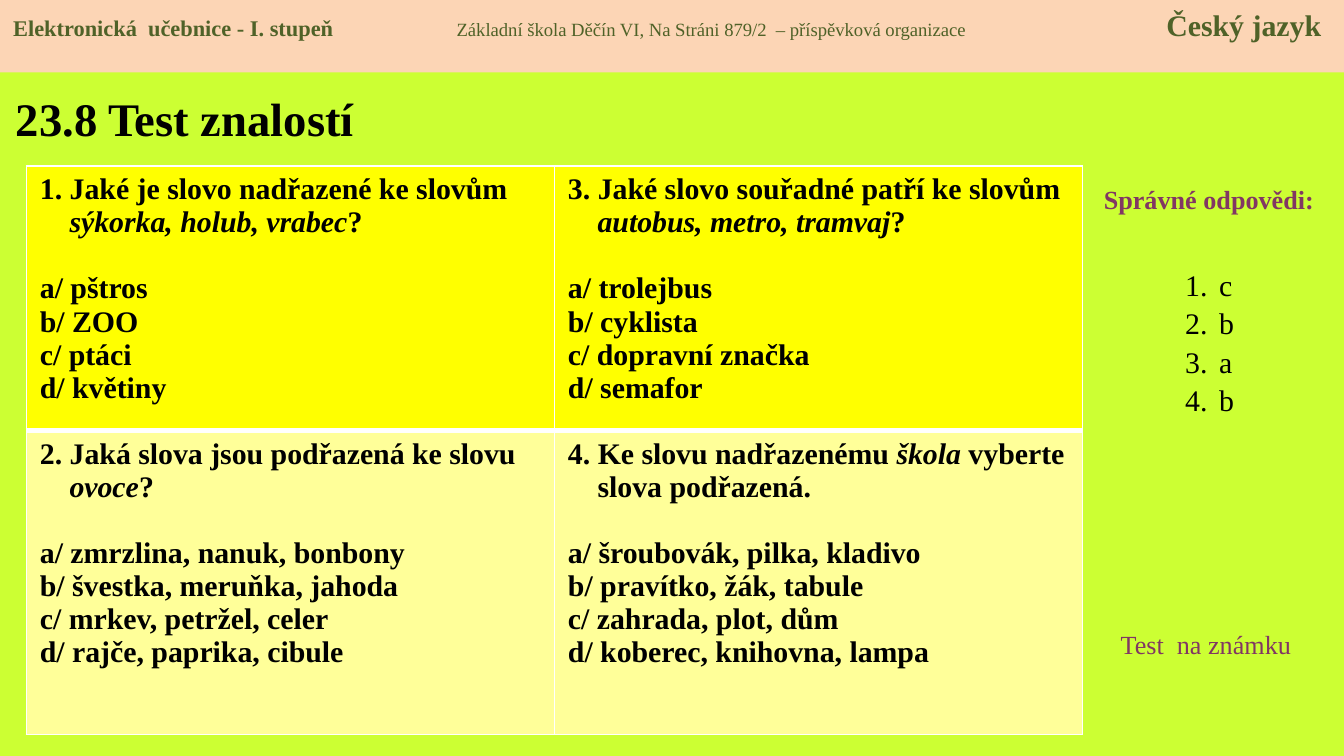
"""Build a Czech vocabulary test slide with a question grid and an answer key."""
from lxml.etree import SubElement as Sub
from pptx import Presentation
from pptx.dml.color import RGBColor
from pptx.enum.shapes import MSO_SHAPE as Shape
from pptx.enum.text import MSO_ANCHOR as Anchor, PP_ALIGN as Align
from pptx.oxml.ns import qn
from pptx.util import Cm, Pt


def hue(code):
    return RGBColor.from_string(code)


def style(para, size, color, bold=False):
    font = para.font
    font.name, font.size, font.bold = "Times New Roman", Pt(size), bold
    font.color.rgb = hue(color)


BLACK, PLUM, GREEN, WHITE = "000000", "813763", "4F6228", "FFFFFF"

deck = Presentation()
deck.slide_width, deck.slide_height = Cm(25.4), Cm(14.29)
slide = deck.slides.add_slide(deck.slide_layouts[6])
slide.background.fill.solid()
slide.background.fill.fore_color.rgb = hue("CCFF33")

labels = [
    ("23.8 Test znalostí", 0.05, 1.4, 8.1, 1.65, 25, BLACK, True, Align.LEFT),
    ("Správné odpovědi:", 20.45, 3.35, 4.8, 0.86, 14, PLUM, True, Align.CENTER),
    ("Test  na známku", 20.93, 11.76, 3.99, 0.86, 14, PLUM, False, Align.LEFT),
]
for text, x, y, w, h, size, color, bold, align in labels:
    frame = slide.shapes.add_textbox(Cm(x), Cm(y), Cm(w), Cm(h)).text_frame
    frame.word_wrap = True
    frame.vertical_anchor = Anchor.MIDDLE if size == 25 else Anchor.TOP
    para = frame.paragraphs[0]
    para.text, para.alignment = text, align
    style(para, size, color, bold)

tests = [
    [
        ("1. Jaké je slovo nadřazené ke slovům", "*sýkorka, holub, vrabec*?",
         "a/ pštros", "b/ ZOO", "c/ ptáci", "d/ květiny"),
        ("3. Jaké slovo souřadné patří ke slovům", "*autobus, metro, tramvaj*?",
         "a/ trolejbus", "b/ cyklista", "c/ dopravní značka", "d/ semafor"),
    ],
    [
        ("2. Jaká slova jsou podřazená ke slovu", "*ovoce*?",
         "a/ zmrzlina, nanuk, bonbony", "b/ švestka, meruňka, jahoda",
         "c/ mrkev, petržel, celer", "d/ rajče, paprika, cibule"),
        ("4. Ke slovu nadřazenému *škola* vyberte", "slova podřazená.",
         "a/ šroubovák, pilka, kladivo", "b/ pravítko, žák, tabule",
         "c/ zahrada, plot, dům", "d/ koberec, knihovna, lampa"),
    ],
]
grid = slide.shapes.add_table(2, 2, Cm(0.5), Cm(3.14), Cm(19.96), Cm(10.74)).table
for row, high in zip(grid.rows, (5, 5.74)):
    row.height = Cm(high)
for r, (tint, row) in enumerate(zip(("FFFF00", "FFFF99"), tests)):
    for c, lines in enumerate(row):
        cell = grid.cell(r, c)
        props = cell._tc.get_or_add_tcPr()
        for side in ("L", "R", "T", "B"):
            thick = 3 if (r, side) in ((0, "B"), (1, "T")) else 1
            edge = Sub(props, qn(f"a:ln{side}"), w=str(Pt(thick)))
            Sub(Sub(edge, qn("a:solidFill")), qn("a:srgbClr"), val=WHITE)
        cell.fill.solid()
        cell.fill.fore_color.rgb = hue(tint)
        frame = cell.text_frame
        for i, line in enumerate(lines):
            para = frame.add_paragraph() if i else frame.paragraphs[0]
            if i == 1:
                para._p.get_or_add_pPr().set("marL", str(Cm(0.56)))
            if i == 2:
                para.space_before = Pt(17.7)
            for n, part in enumerate(line.split("*")):
                if part:
                    run = para.add_run()
                    run.text = part
                    if n % 2:
                        run.font.italic = True
            style(para, 16, BLACK, True)

frame = slide.shapes.add_textbox(Cm(22.15), Cm(4.19), Cm(1.4), Cm(5.05)).text_frame
frame.word_wrap = True
frame.margin_top = Cm(0.85)
for i, key in enumerate("cbab"):
    para = frame.add_paragraph() if i else frame.paragraphs[0]
    para.text = key
    if i:
        para.space_before = Pt(1.4)
    props = para._p.get_or_add_pPr()
    props.set("marL", str(Cm(0.64)))
    props.set("indent", str(Cm(-0.64)))
    Sub(props, qn("a:buFont"), typeface="+mj-lt")
    Sub(props, qn("a:buAutoNum"), type="arabicPeriod")
    style(para, 16, BLACK)

band = slide.shapes.add_shape(Shape.RECTANGLE, 0, 0, Cm(25.4), Cm(1.37))
band.shadow.inherit = False
band.fill.solid()
band.fill.fore_color.rgb = hue("FCD5B5")
band.line.fill.background()
frame = band.text_frame
frame.vertical_anchor = Anchor.TOP
para = frame.paragraphs[0]
para.alignment = Align.LEFT
tabs = Sub(para._p.get_or_add_pPr(), qn("a:tabLst"))
for spot, kind in ((8.38, "l"), (24.72, "r")):
    Sub(tabs, qn("a:tab"), pos=str(Cm(spot)), algn=kind)
heads = [
    ("Elektronická  učebnice - I. stupeň", 12, True),
    ("\tZákladní škola Děčín VI, Na Stráni 879/2  – příspěvková organizace", 10, False),
    ("\tČeský jazyk", 16, True),
]
for text, size, bold in heads:
    run = para.add_run()
    run.text = text
    style(run, size, GREEN, bold)

deck.save("out.pptx")
